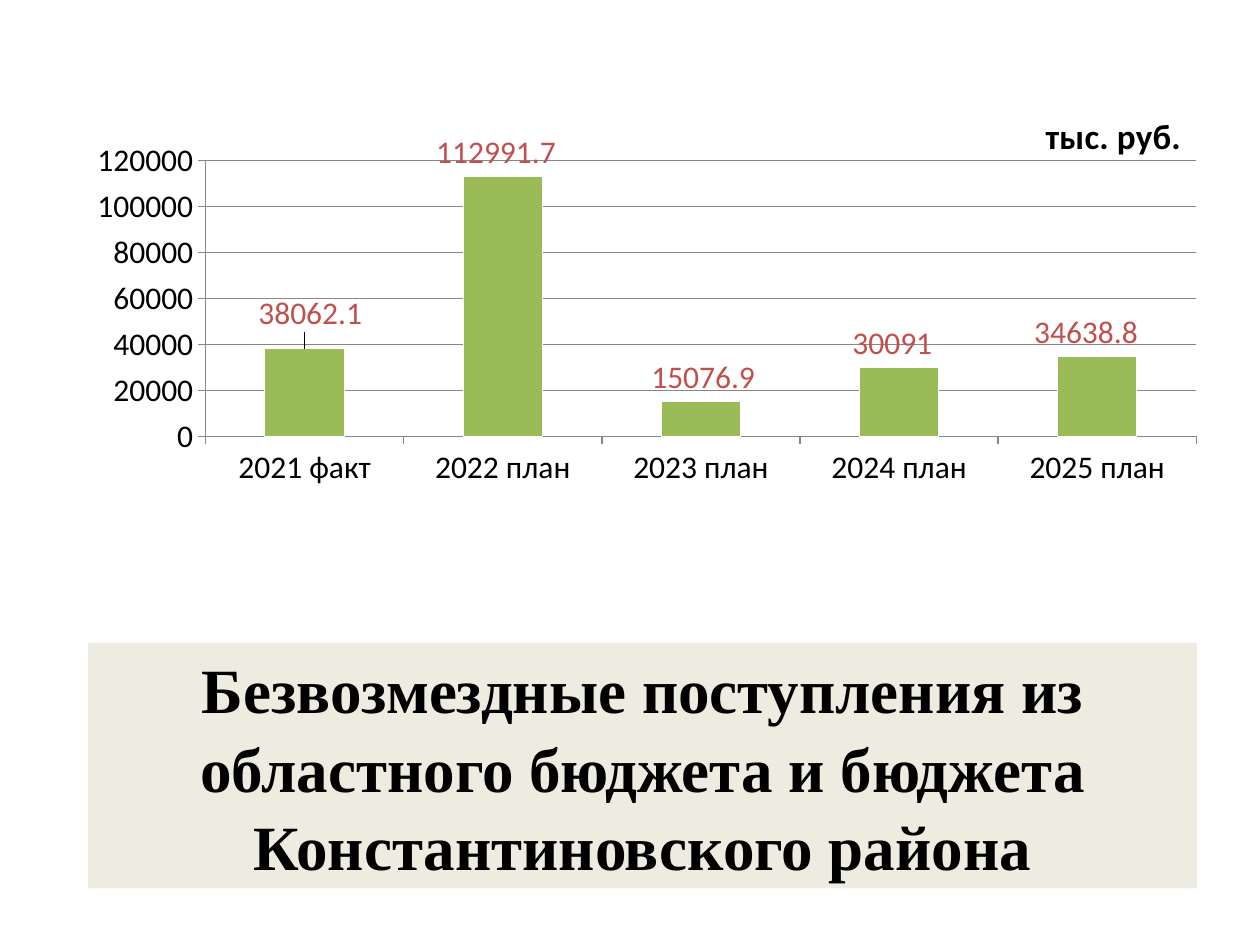
from lxml import etree
from pptx import Presentation
from pptx.chart.data import CategoryChartData
from pptx.dml.color import RGBColor
from pptx.enum.chart import XL_CHART_TYPE, XL_LABEL_POSITION, XL_TICK_MARK
from pptx.enum.text import MSO_ANCHOR, MSO_AUTO_SIZE, PP_ALIGN
from pptx.oxml.ns import qn
from pptx.util import Inches, Pt

COLUMN = XL_CHART_TYPE.COLUMN_CLUSTERED
ABOVE = XL_LABEL_POSITION.OUTSIDE_END
OUT = XL_TICK_MARK.OUTSIDE
MIDDLE = MSO_ANCHOR.MIDDLE
FIXED = MSO_AUTO_SIZE.NONE
CENTER = PP_ALIGN.CENTER

BLACK, WHITE, GREY = "000000", "FFFFFF", "868686"
GREEN, RED, SAND = "9BBB59", "C0504D", "EEECE1"

YEARS = ["2021 факт", "2022 план", "2023 план", "2024 план", "2025 план"]
SUMS = [38062.1, 112991.7, 15076.9, 30091, 34638.8]
# Label shifts as shares of the chart's size
SHIFTS = [(0.005, -0.02), (-0.006, 0), (0.002, 0), (-0.006, 0), (-0.01, 0)]


def color(code):
    return RGBColor.from_string(code)


def style(font, size, code, name, bold=False):
    font.size, font.name, font.bold = Pt(size), name, bold
    font.color.rgb = color(code)


def layout(**parts):
    """Return a manual chart layout with the given parts."""
    root = etree.Element(qn("c:layout"))
    manual = etree.SubElement(root, qn("c:manualLayout"))
    for tag, value in parts.items():
        etree.SubElement(manual, qn(f"c:{tag}")).set("val", str(value))
    return root


class Page:
    sans, serif = "Calibri", "Times New Roman"

    def __init__(self, deck):
        self.wide, self.high = deck.slide_width, deck.slide_height
        self.slide = deck.slides.add_slide(deck.slide_layouts[5])

    def box(self, left, top, width, height):
        """Turn shares of the slide into lengths."""
        return (int(left * self.wide), int(top * self.high),
                int(width * self.wide), int(height * self.high))

    def title(self, text, *place):
        shape = self.slide.shapes.title
        shape.left, shape.top, shape.width, shape.height = self.box(*place)
        shape.fill.solid()
        shape.fill.fore_color.rgb = color(SAND)
        frame = shape.text_frame
        frame.text = text
        frame.word_wrap, frame.auto_size = True, FIXED
        frame.vertical_anchor = MIDDLE
        line = frame.paragraphs[0]
        line.alignment, line.line_spacing = CENTER, 1.04
        style(line.runs[0].font, 36, BLACK, self.serif, True)

    def chart(self, unit, *place):
        data = CategoryChartData()
        data.categories = YEARS
        data.add_series("Series 1", SUMS)
        chart = self.slide.shapes.add_chart(
            COLUMN, *self.box(*place), data).chart
        style(chart.font, 18, BLACK, self.sans)
        chart.has_legend = False
        self.head(chart, unit)
        self.axes(chart)
        self.bars(chart.plots[0])
        area = chart.plots[0]._element.getparent()
        for old in area.findall(qn("c:layout")):
            area.remove(old)
        area.insert(0, layout(layoutTarget="inner", xMode="edge", yMode="edge",
                              x=0.116, y=0.169, w=0.884, h=0.495))

    def head(self, chart, unit):
        chart.has_title = True
        title = chart.chart_title
        title.include_in_layout = False
        frame = title.text_frame
        frame.text = unit
        style(frame.paragraphs[0].runs[0].font, 20, BLACK, self.sans, True)
        root = title._element
        for old in root.findall(qn("c:layout")):
            root.remove(old)
        root.find(qn("c:tx")).addnext(
            layout(xMode="edge", yMode="edge", x=0.86, y=0.07))

    def axes(self, chart):
        values = chart.value_axis
        values.minimum_scale, values.maximum_scale = 0, 120000
        values.major_unit = 20000
        values.has_major_gridlines = True
        for axis in (chart.category_axis, values):
            axis.major_tick_mark = OUT
            axis.format.line.color.rgb = color(GREY)
        values.major_gridlines.format.line.color.rgb = color(GREY)

    def bars(self, plot):
        plot.gap_width, plot.vary_by_categories = 150, False
        series = plot.series[0]
        series.format.fill.solid()
        series.format.fill.fore_color.rgb = color(GREEN)
        series.format.line.color.rgb = color(WHITE)
        labels = series.data_labels
        labels.show_value, labels.position = True, ABOVE
        style(labels.font, 18, RED, self.sans)
        for index, (x, y) in enumerate(SHIFTS):
            label = series.points[index].data_label
            style(label.font, 18, RED, self.sans)
            label.position = ABOVE
        for item, (x, y) in zip(labels._element.findall(qn("c:dLbl")), SHIFTS):
            item.find(qn("c:idx")).addnext(layout(x=x, y=y))


def main():
    deck = Presentation()
    deck.slide_width, deck.slide_height = Inches(10), Inches(7.5)
    page = Page(deck)
    page.title("Безвозмездные поступления из областного бюджета "
               "и бюджета Константиновского района", 0.07, 0.68, 0.88, 0.26)
    page.chart("тыс. руб.", 0.06, 0.07, 0.89, 0.59)
    deck.save("out.pptx")


if __name__ == "__main__":
    main()
